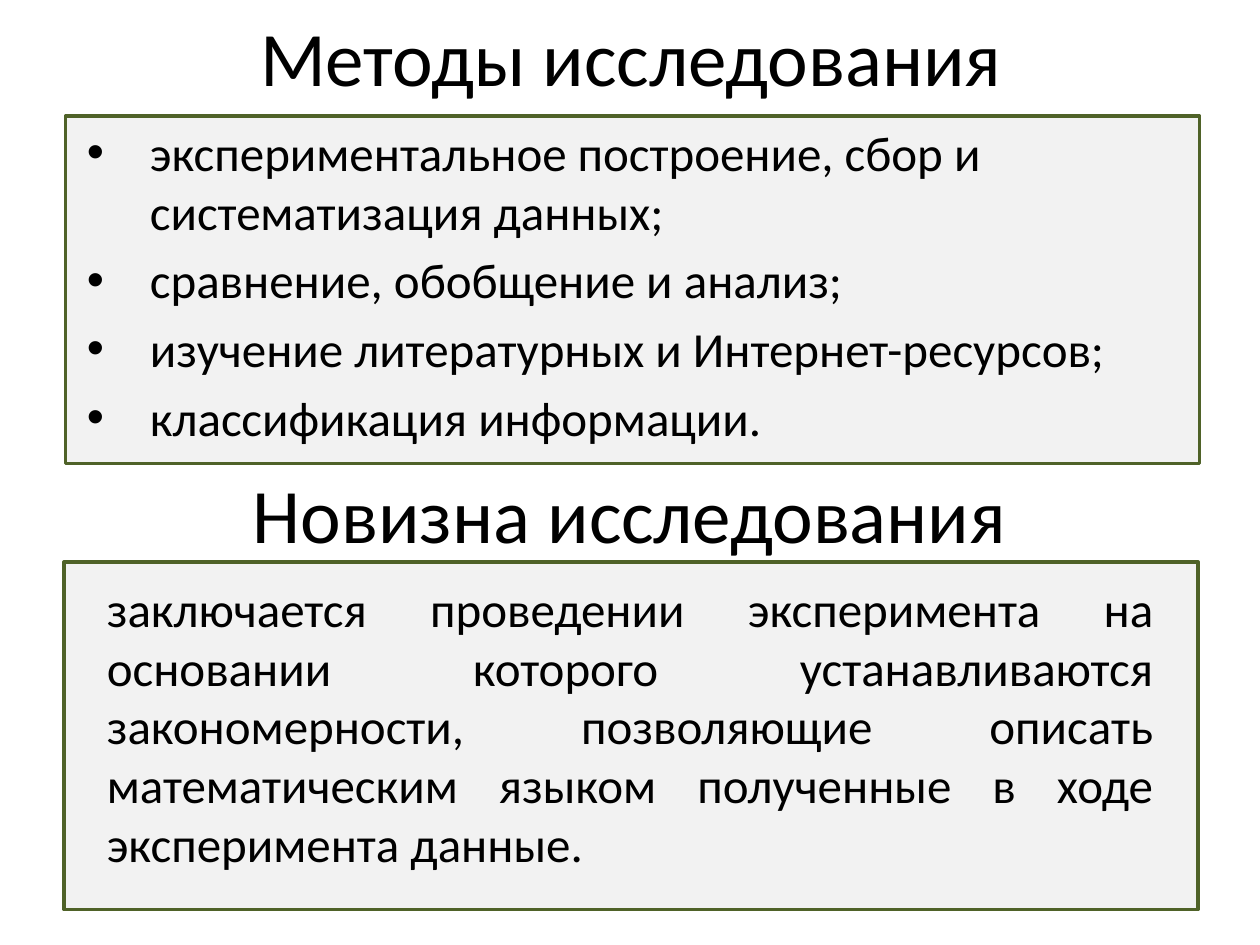
from lxml import etree
from pptx import Presentation
from pptx.dml.color import RGBColor
from pptx.enum.shapes import MSO_SHAPE
from pptx.enum.text import MSO_ANCHOR, MSO_AUTO_SIZE, PP_ALIGN
from pptx.oxml.ns import qn
from pptx.util import Inches, Pt

RECT = MSO_SHAPE.RECTANGLE
TOP, MIDDLE = MSO_ANCHOR.TOP, MSO_ANCHOR.MIDDLE
LEFT, CENTER, JUSTIFY = PP_ALIGN.LEFT, PP_ALIGN.CENTER, PP_ALIGN.JUSTIFY
BLACK = RGBColor(0x00, 0x00, 0x00)
PANEL = RGBColor(0xF2, 0xF2, 0xF2)
GREEN = RGBColor(0x4F, 0x62, 0x28)

# Content
METHODS_TITLE = "Методы исследования"
METHODS = [
    "экспериментальное построение, сбор и систематизация данных;",
    "сравнение, обобщение и анализ;",
    "изучение литературных и Интернет-ресурсов;",
    "классификация информации.",
]
NOVELTY_TITLE = "Новизна исследования"
NOVELTY = (
    "заключается проведении эксперимента на основании которого "
    "устанавливаются закономерности, позволяющие описать математическим "
    "языком полученные в ходе эксперимента данные."
)

# Layout in inches: left, top, width, height
PANELS = [(0.51, 4.46, 9, 2.76), (0.52, 0.92, 9, 2.76)]
METHODS_TITLE_BOX = (0.51, -0.18, 9, 1.25)
METHODS_BOX = (0.51, 0.92, 8.98, 2.83)
NOVELTY_TITLE_BOX = (0.51, 3.44, 8.98, 1.25)
NOVELTY_BOX = (0.75, 4.54, 8.5, 2.52)

HEADING = {"size": Pt(44), "name": "Calibri"}
BODY = {"size": Pt(28), "name": "Calibri"}


def inches(box):
    return [Inches(v) for v in box]


def place(s, box):
    s.left, s.top, s.width, s.height = inches(box)


def write(s, texts, font, align, anchor):
    tf = s.text_frame
    tf.word_wrap = True
    tf.auto_size = MSO_AUTO_SIZE.NONE
    tf.vertical_anchor = anchor
    tf.text = "\n".join(texts)
    for i, p in enumerate(tf.paragraphs):
        p.alignment = align
        p.space_before = Pt(5.6 if i else 0)
        for r in p.runs:
            for key, value in font.items():
                setattr(r.font, key, value)
            r.font.color.rgb = BLACK


def add_panel(slide, box):
    s = slide.shapes.add_shape(RECT, *inches(box))
    s.shadow.inherit = False
    s.fill.solid()
    s.fill.fore_color.rgb = PANEL
    color = s.fill._xPr.find(qn("a:solidFill"))[0]
    etree.SubElement(color, qn("a:alpha")).set("val", "96000")
    s.line.color.rgb = GREEN
    s.line.width = Pt(2)
    return s


prs = Presentation()
prs.slide_width, prs.slide_height = Inches(10), Inches(7.5)
slide = prs.slides.add_slide(prs.slide_layouts[1])
title, body = slide.placeholders

# Panels go behind the placeholders
for i, box in enumerate(PANELS):
    slide.shapes._spTree.insert(2 + i, add_panel(slide, box)._element)

# Methods: title and bulleted list
place(title, METHODS_TITLE_BOX)
write(title, [METHODS_TITLE], HEADING, CENTER, MIDDLE)
place(body, METHODS_BOX)
write(body, METHODS, BODY, LEFT, TOP)
for p in body.text_frame.paragraphs:
    pPr = p._p.get_or_add_pPr()
    pPr.set("marL", str(Inches(0.58)))
    pPr.set("indent", str(Inches(-0.5)))
    etree.SubElement(pPr, qn("a:buFont")).set("typeface", "Arial")
    etree.SubElement(pPr, qn("a:buChar")).set("char", "•")

# Novelty: heading and justified text
s = slide.shapes.add_textbox(*inches(NOVELTY_TITLE_BOX))
write(s, [NOVELTY_TITLE], HEADING, CENTER, MIDDLE)
s = slide.shapes.add_textbox(*inches(NOVELTY_BOX))
write(s, [NOVELTY], BODY, JUSTIFY, TOP)

prs.save("out.pptx")
